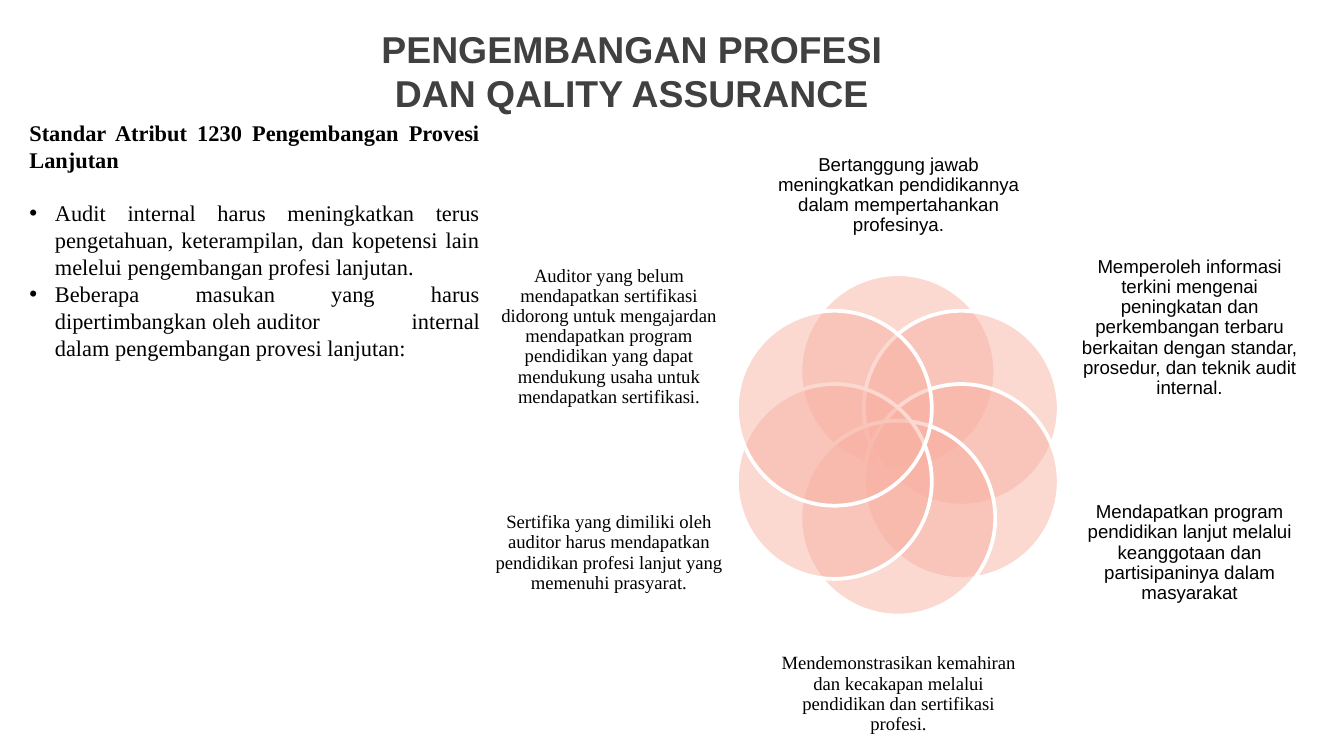
from math import cos, radians, sin

from lxml import etree
from pptx import Presentation
from pptx.dml.color import RGBColor
from pptx.enum.shapes import MSO_SHAPE
from pptx.enum.text import MSO_ANCHOR, PP_ALIGN
from pptx.oxml.ns import qn
from pptx.util import Inches, Pt

CENTER, JUSTIFY = PP_ALIGN.CENTER, PP_ALIGN.JUSTIFY
MIDDLE = MSO_ANCHOR.MIDDLE
OVAL = MSO_SHAPE.OVAL

COLORS = {"title": "404040", "text": "000000", "petal": "F8B2A3", "outline": "FFFFFF"}
SANS, SERIF = "Arial", "Times New Roman"

TITLE = "PENGEMBANGAN PROFESI \vDAN QALITY ASSURANCE "
HEADING = "Standar Atribut 1230 Pengembangan Provesi Lanjutan"
BULLETS = [
    "Audit internal harus meningkatkan terus pengetahuan, keterampilan, dan kopetensi "
    "lain melelui pengembangan profesi lanjutan.",
    "Beberapa masukan yang harus dipertimbangkan oleh auditor\tinternal dalam "
    "pengembangan provesi lanjutan:",
]

# Clockwise from the top: label, font, box (left, top, width, height)
PETALS = [
    ("Bertanggung jawab meningkatkan pendidikannya dalam mempertahankan profesinya.",
     SANS, (5.78, 0.96, 1.81, 0.99)),
    ("Memperoleh informasi terkini mengenai peningkatan dan perkembangan terbaru "
     "berkaitan dengan standar, prosedur, dan teknik audit internal.",
     SANS, (7.99, 1.9, 1.72, 1.08)),
    ("Mendapatkan program pendidikan lanjut melalui keanggotaan dan partisipaninya "
     "dalam masyarakat",
     SANS, (7.99, 3.51, 1.72, 1.21)),
    ("Mendemonstrasikan kemahiran dan kecakapan melalui pendidikan dan sertifikasi profesi.",
     SERIF, (5.78, 4.67, 1.81, 0.99)),
    ("Sertifika yang dimiliki oleh auditor harus mendapatkan pendidikan profesi lanjut "
     "yang memenuhi prasyarat.",
     SERIF, (3.67, 3.51, 1.72, 1.21)),
    ("Auditor yang belum mendapatkan sertifikasi didorong untuk mengajardan mendapatkan "
     "program pendidikan yang dapat mendukung usaha untuk mendapatkan sertifikasi.",
     SERIF, (3.67, 1.9, 1.72, 1.21)),
]
CENTER_X, CENTER_Y = 6.68, 3.31
RING_RADIUS, DIAMETER = 0.545, 1.45


def add_text_frame(slide, box, anchor=None, margin=None):
    frame = slide.shapes.add_textbox(*map(Inches, box)).text_frame
    frame.word_wrap = True
    if anchor is not None:
        frame.vertical_anchor = anchor
    if margin is not None:
        frame.margin_left = frame.margin_right = Inches(margin)
        frame.margin_top = frame.margin_bottom = Inches(margin)
    return frame


def style_paragraph(paragraph, font_name, size, color, alignment, bold=False):
    paragraph.alignment = alignment
    font = paragraph.font
    font.name, font.size, font.bold = font_name, Pt(size), bold
    font.color.rgb = RGBColor.from_string(COLORS[color])


def add_bullet(paragraph, indent=0.19, tab=2.84):
    properties = paragraph._p.get_or_add_pPr()
    properties.set("marL", str(Inches(indent)))
    properties.set("indent", str(-Inches(indent)))
    etree.SubElement(properties, qn("a:buFont"), typeface=SANS)
    etree.SubElement(properties, qn("a:buChar"), char="•")
    tabs = etree.SubElement(properties, qn("a:tabLst"))
    etree.SubElement(tabs, qn("a:tab"), pos=str(Inches(tab)), algn="l")


def add_title(slide):
    frame = add_text_frame(slide, (-0.26, 0.21, 10, 0.63), MIDDLE)
    paragraph = frame.paragraphs[0]
    paragraph.text = TITLE
    style_paragraph(paragraph, SANS, 20, "title", CENTER, bold=True)


def add_body(slide):
    frame = add_text_frame(slide, (0.12, 0.84, 3.55, 2.12))
    heading = frame.paragraphs[0]
    heading.text = HEADING
    heading.space_after = Pt(14)
    style_paragraph(heading, SERIF, 12, "text", JUSTIFY, bold=True)
    for text in BULLETS:
        paragraph = frame.add_paragraph()
        paragraph.text = text
        add_bullet(paragraph)
        style_paragraph(paragraph, SERIF, 12, "text", JUSTIFY)


def add_petal(slide, angle):
    left = CENTER_X + RING_RADIUS * sin(angle) - DIAMETER / 2
    top = CENTER_Y - RING_RADIUS * cos(angle) - DIAMETER / 2
    shape = slide.shapes.add_shape(OVAL, *map(Inches, (left, top, DIAMETER, DIAMETER)))
    shape.shadow.inherit = False
    shape.fill.solid()
    shape.fill.fore_color.rgb = RGBColor.from_string(COLORS["petal"])
    color = shape._element.spPr.find(qn("a:solidFill"))[0]
    etree.SubElement(color, qn("a:alpha"), val="50000")
    shape.line.color.rgb = RGBColor.from_string(COLORS["outline"])
    shape.line.width = Pt(2)


def add_label(slide, text, font_name, box):
    paragraph = add_text_frame(slide, box, MIDDLE, margin=0).paragraphs[0]
    paragraph.text = text
    paragraph.line_spacing = 0.9
    style_paragraph(paragraph, font_name, 10, "text", CENTER)


def main():
    presentation = Presentation()
    # Widescreen, 16:9
    presentation.slide_width = Inches(10)
    presentation.slide_height = Inches(10 * 9 / 16)
    slide = presentation.slides.add_slide(presentation.slide_layouts[6])

    # Title and left column
    add_title(slide)
    add_body(slide)

    # Ring of overlapping circles with their labels
    for index, (text, font_name, box) in enumerate(PETALS):
        add_petal(slide, radians(index * 360 / len(PETALS)))
        add_label(slide, text, font_name, box)

    presentation.save("out.pptx")


if __name__ == "__main__":
    main()
